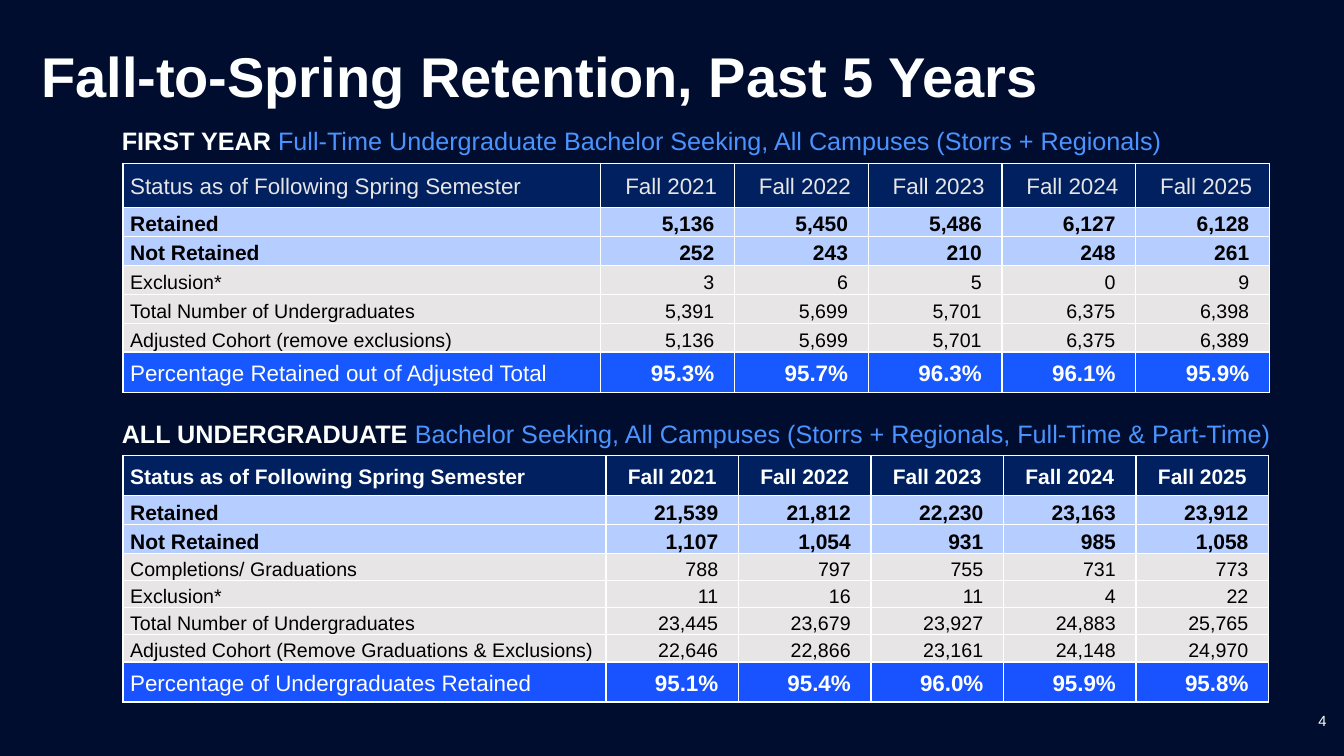
"""Build the slide of fall-to-spring retention with its two cohort tables."""
from lxml import etree
from pptx import Presentation
from pptx.dml.color import RGBColor
from pptx.enum.text import MSO_ANCHOR, MSO_AUTO_SIZE, PP_ALIGN
from pptx.oxml.ns import qn
from pptx.util import Cm, Pt

LEFT, CENTER, RIGHT = PP_ALIGN.LEFT, PP_ALIGN.CENTER, PP_ALIGN.RIGHT
TOP, MIDDLE, BOTTOM = MSO_ANCHOR.TOP, MSO_ANCHOR.MIDDLE, MSO_ANCHOR.BOTTOM
FIT_SHAPE = MSO_AUTO_SIZE.SHAPE_TO_FIT_TEXT

COLORS = {
    "background": "000D2F", "white": "FEFFFF", "black": "000000",
    "subtitle": "4B94FF", "header": "002060", "key": "B5CDFF",
    "detail": "E7E5E5", "first result": "1858FF", "all result": "1853FF",
}
YEARS = ["Fall 2021", "Fall 2022", "Fall 2023", "Fall 2024", "Fall 2025"]
HEADER = ["Status as of Following Spring Semester"] + YEARS

# kind: (anchor, text size, text color, label bold, values bold)
ROW_STYLES = {
    "first header": (MIDDLE, 16, "detail", False, False),
    "all header": (MIDDLE, 15, "white", True, True),
    "key": (BOTTOM, 15, "black", True, True),
    "detail": (BOTTOM, 14, "black", False, False),
    "result": (MIDDLE, 16, "white", False, True),
}
COHORTS = [
    {
        "name": "FIRST YEAR ",
        "scope": "Full-Time Undergraduate Bachelor Seeking, All Campuses (Storrs + Regionals)",
        "subtitle": (2.82, 2.92, 30.5, 1.09),
        "top": 4.11, "label width": 12.04, "year width": 3.37,
        "header height": 1.11, "row height": 0.73, "header margin": 0,
        "header": "first header", "result": "first result",
        "rows": [
            ["Retained", "5,136", "5,450", "5,486", "6,127", "6,128"],
            ["Not Retained", "252", "243", "210", "248", "261"],
            ["Exclusion*", "3", "6", "5", "0", "9"],
            ["Total Number of Undergraduates", "5,391", "5,699", "5,701", "6,375", "6,398"],
            ["Adjusted Cohort (remove exclusions)", "5,136", "5,699", "5,701", "6,375", "6,389"],
            ["Percentage Retained out of Adjusted Total", "95.3%", "95.7%", "96.3%", "96.1%", "95.9%"],
        ],
    },
    {
        "name": "ALL UNDERGRADUATE ",
        "scope": "Bachelor Seeking, All Campuses (Storrs + Regionals, Full-Time & Part-Time)",
        "subtitle": (2.82, 10.31, 31.67, 1.07),
        "top": 11.48, "label width": 12.17, "year width": 3.34,
        "header height": 1.01, "row height": 0.67, "header margin": 0.18,
        "header": "all header", "result": "all result",
        "rows": [
            ["Retained", "21,539", "21,812", "22,230", "23,163", "23,912"],
            ["Not Retained", "1,107", "1,054", "931", "985", "1,058"],
            ["Completions/ Graduations", "788", "797", "755", "731", "773"],
            ["Exclusion*", "11", "16", "11", "4", "22"],
            ["Total Number of Undergraduates", "23,445", "23,679", "23,927", "24,883", "25,765"],
            ["Adjusted Cohort (Remove Graduations & Exclusions)", "22,646", "22,866", "23,161", "24,148", "24,970"],
            ["Percentage of Undergraduates Retained", "95.1%", "95.4%", "96.0%", "95.9%", "95.8%"],
        ],
    },
]
RESULT_HEIGHT = 1.01


def set_font(font, size, color, bold):
    font.name, font.size, font.bold = "Arial", Pt(size), bold
    font.color.rgb = RGBColor.from_string(COLORS[color])


def add_text_box(box, anchor, align=LEFT):
    text_frame = slide.shapes.add_textbox(*map(Cm, box)).text_frame
    text_frame.word_wrap = True
    text_frame.vertical_anchor = anchor
    text_frame.paragraphs[0].alignment = align
    return text_frame


presentation = Presentation()
presentation.slide_width, presentation.slide_height = Cm(33.87), Cm(19.05)
slide = presentation.slides.add_slide(presentation.slide_layouts[6])
slide.background.fill.solid()
slide.background.fill.fore_color.rgb = RGBColor.from_string(COLORS["background"])

title = add_text_box((0.79, 1.07, 31.67, 1.88), MIDDLE).paragraphs[0]
title.text = "Fall-to-Spring Retention, Past 5 Years"
title.line_spacing = 0.9
set_font(title.font, 40, "white", True)

for cohort in COHORTS:
    text_frame = add_text_box(cohort["subtitle"], TOP)
    text_frame.auto_size = FIT_SHAPE
    subtitle = text_frame.paragraphs[0]
    subtitle.line_spacing, subtitle.space_after = 1.15, Pt(8)
    for text, color, bold in ((cohort["name"], "white", True), (cohort["scope"], "subtitle", False)):
        run = subtitle.add_run()
        run.text = text
        set_font(run.font, 18, color, bold)

    rows = [HEADER] + cohort["rows"]
    last_row = len(rows) - 1
    heights = [cohort["header height"]] + [cohort["row height"]] * (last_row - 1) + [RESULT_HEIGHT]
    widths = [cohort["label width"]] + [cohort["year width"]] * len(YEARS)
    table = slide.shapes.add_table(
        len(rows), len(widths), Cm(3.1), Cm(cohort["top"]), Cm(sum(widths)), Cm(sum(heights))
    ).table
    table.first_row = table.horz_banding = False
    for column, width in zip(table.columns, widths):
        column.width = Cm(width)

    for row_index, values in enumerate(rows):
        table.rows[row_index].height = Cm(heights[row_index])
        if row_index == 0:
            kind, fill = cohort["header"], "header"
            value_align, value_margin = CENTER, cohort["header margin"]
        else:
            kind = "result" if row_index == last_row else "key" if row_index <= 2 else "detail"
            fill = cohort["result"] if kind == "result" else kind
            value_align, value_margin = RIGHT, 0.51
        anchor, size, color, label_bold, value_bold = ROW_STYLES[kind]

        for column_index, text in enumerate(values):
            is_label = column_index == 0
            cell = table.cell(row_index, column_index)
            cell.vertical_anchor = anchor
            cell.margin_left = Cm(0.18)
            cell.margin_right = Cm(0.18 if is_label else value_margin)
            cell.margin_top = cell.margin_bottom = 0
            properties = cell._tc.get_or_add_tcPr()
            for side in ("a:lnL", "a:lnR", "a:lnT", "a:lnB"):
                border = etree.SubElement(properties, qn(side), w=str(Pt(1)))
                line_fill = etree.SubElement(border, qn("a:solidFill"))
                etree.SubElement(line_fill, qn("a:srgbClr"), val=COLORS["white"])
            cell.fill.solid()
            cell.fill.fore_color.rgb = RGBColor.from_string(COLORS[fill])
            paragraph = cell.text_frame.paragraphs[0]
            paragraph.text = text
            paragraph.alignment = LEFT if is_label else value_align
            paragraph.line_spacing, paragraph.space_after = 1.15, Pt(8)
            set_font(paragraph.font, size, color, label_bold if is_label else value_bold)

page_number = add_text_box((26.06, 17.65, 7.62, 1.02), MIDDLE, RIGHT).paragraphs[0]
page_number.text = "4"
set_font(page_number.font, 10.5, "white", False)

presentation.save("out.pptx")
